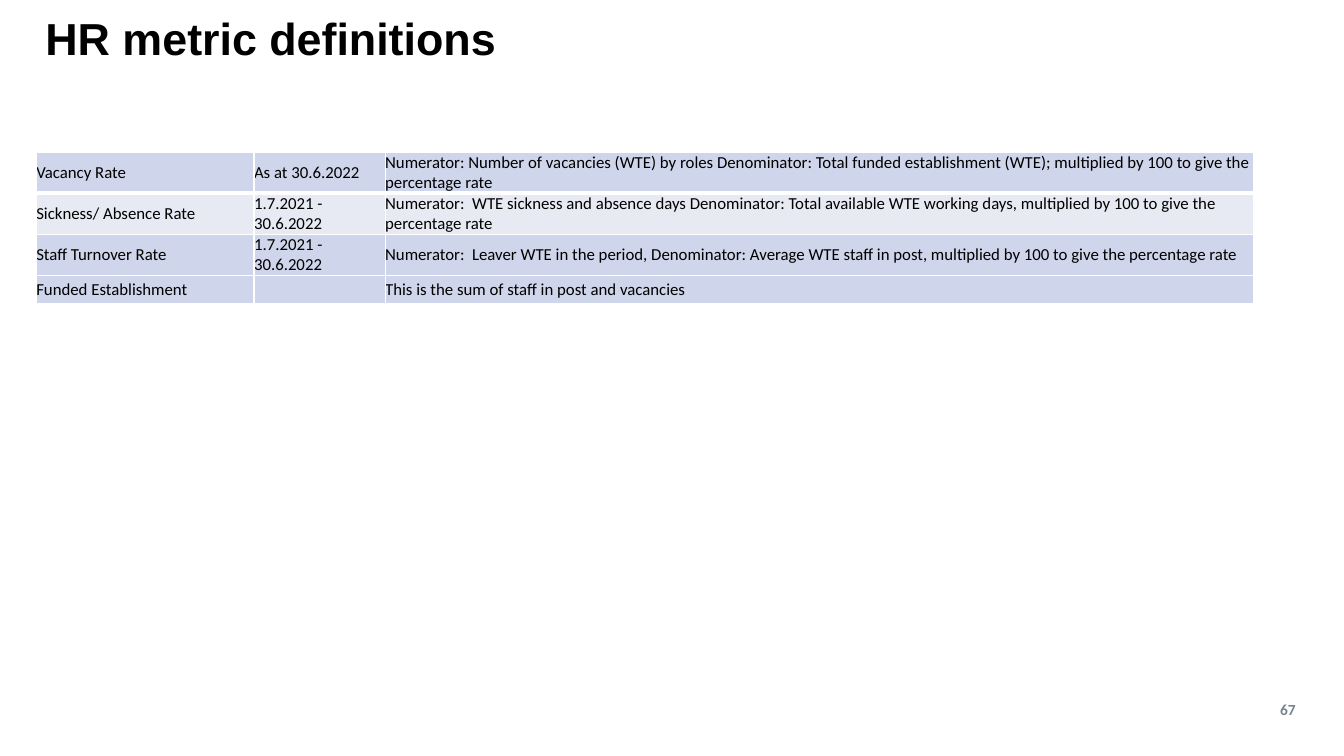
from lxml import etree
from pptx import Presentation
from pptx.dml.color import RGBColor
from pptx.enum.text import MSO_ANCHOR as Anchor, MSO_AUTO_SIZE as AutoSize, PP_ALIGN as Align
from pptx.oxml import parse_xml
from pptx.oxml.ns import nsdecls, qn
from pptx.util import Pt

TITLE = "HR metric definitions"
PAGE_NUMBER = "67"
METRICS = [
    ("Vacancy Rate", "As at 30.6.2022",
     "Numerator: Number of vacancies (WTE) by roles Denominator: Total funded establishment (WTE); "
     "multiplied by 100 to give the percentage rate"),
    ("Sickness/ Absence Rate", "1.7.2021 - 30.6.2022",
     "Numerator:  WTE sickness and absence days Denominator: Total available WTE working days, "
     "multiplied by 100 to give the percentage rate"),
    ("Staff Turnover Rate", "1.7.2021 - 30.6.2022",
     "Numerator:  Leaver WTE in the period, Denominator: Average WTE staff in post, "
     "multiplied by 100 to give the percentage rate"),
    ("Funded Establishment", "", "This is the sum of staff in post and vacancies"),
]
COLORS = {"text": "000000", "page": "768691", "band": "CFD5EA", "light": "E7EAF3", "border": "FFFFFF"}
ROW_FILLS = ["band", "light", "band", "band"]

PX = 9144  # 100 px to the inch
SLIDE_SIZE = (1333, 750)
TITLE_BOX = (35, 6, 1260, 69)
PAGE_BOX = (1059, 684, 236, 40)
TABLE_ORIGIN = (36, 151)
COLUMN_WIDTHS = [216, 130, 861]
ROW_HEIGHTS = [40, 40, 40, 28]
BODY_SIZE = 12


def px(*lengths):
    return [length * PX for length in lengths]


def style_text(paragraph, font_name, size, color, bold=False):
    for run in paragraph.runs:
        run.font.name = font_name
        run.font.size = Pt(size)
        run.font.bold = bold
        run.font.color.rgb = RGBColor.from_string(COLORS[color])


def set_borders(cell, top, bottom):
    """Draw the four cell borders, placed before the fill as the schema requires."""
    widths = {"lnL": 1, "lnR": 1, "lnT": top, "lnB": bottom}
    for position, (tag, width) in enumerate(widths.items()):
        line = parse_xml(
            f'<a:{tag} {nsdecls("a")} w="{Pt(width)}"><a:solidFill>'
            f'<a:srgbClr val="{COLORS["border"]}"/></a:solidFill></a:{tag}>')
        cell._tc.get_or_add_tcPr().insert(position, line)


def fill_cell(cell, text, fill, top, bottom):
    cell.margin_left = cell.margin_right = cell.margin_top = cell.margin_bottom = 0
    cell.vertical_anchor = Anchor.MIDDLE
    cell.fill.solid()
    cell.fill.fore_color.rgb = RGBColor.from_string(COLORS[fill])
    set_borders(cell, top, bottom)
    cell.text_frame.text = text
    paragraph = cell.text_frame.paragraphs[0]
    style_text(paragraph, "Calibri", BODY_SIZE, "text")
    if not text:
        etree.SubElement(paragraph._p, qn("a:endParaRPr"), sz=str(BODY_SIZE * 100))


def add_title(slide):
    title = slide.shapes.title
    title.left, title.top, title.width, title.height = px(*TITLE_BOX)
    frame = title.text_frame
    frame.text = TITLE
    frame.auto_size = AutoSize.NONE
    frame.vertical_anchor = Anchor.MIDDLE
    paragraph = frame.paragraphs[0]
    paragraph.alignment = Align.LEFT
    paragraph.line_spacing = 0.9
    style_text(paragraph, "Arial", 32, "text", bold=True)


def add_metric_table(slide):
    size = (sum(COLUMN_WIDTHS), sum(ROW_HEIGHTS))
    table = slide.shapes.add_table(
        len(METRICS), len(COLUMN_WIDTHS), *px(*TABLE_ORIGIN, *size)).table
    table.first_row = table.horz_banding = False
    for column, width in zip(table.columns, px(*COLUMN_WIDTHS)):
        column.width = width
    for index, (row, height, metric) in enumerate(zip(table.rows, px(*ROW_HEIGHTS), METRICS)):
        row.height = height
        top = 3 if index == 1 else 1
        bottom = 3 if index == 0 else 1
        for cell, text in zip(row.cells, metric):
            fill_cell(cell, text, ROW_FILLS[index], top, bottom)


def add_page_number(slide):
    frame = slide.shapes.add_textbox(*px(*PAGE_BOX)).text_frame
    frame.word_wrap = True
    frame.vertical_anchor = Anchor.MIDDLE
    frame.text = PAGE_NUMBER
    paragraph = frame.paragraphs[0]
    paragraph.alignment = Align.RIGHT
    style_text(paragraph, "Calibri", 11, "page", bold=True)


def main():
    presentation = Presentation()
    presentation.slide_width, presentation.slide_height = px(*SLIDE_SIZE)
    slide = presentation.slides.add_slide(presentation.slide_layouts[5])
    add_title(slide)
    add_metric_table(slide)
    add_page_number(slide)
    presentation.save("out.pptx")


if __name__ == "__main__":
    main()
